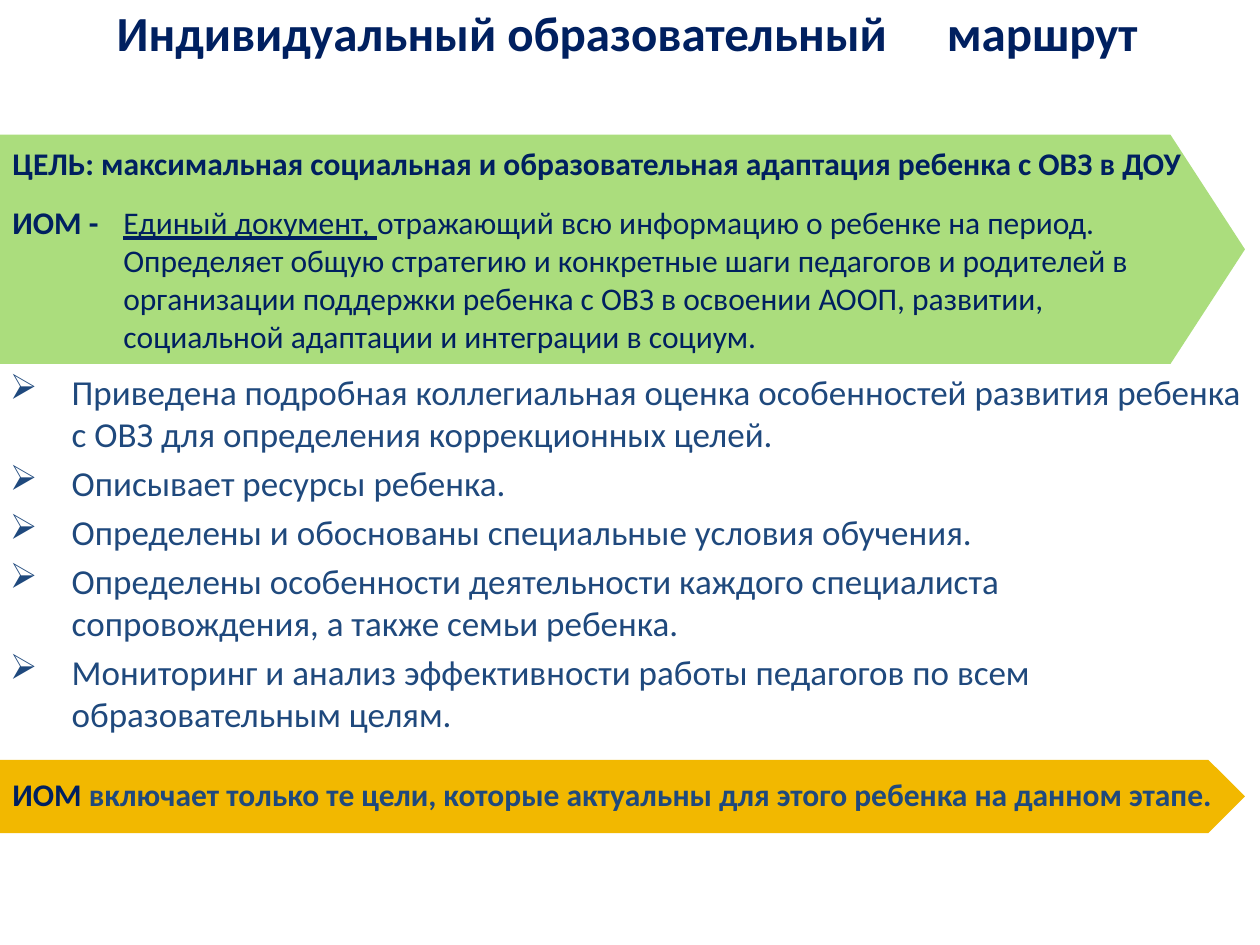
from lxml import etree
from pptx import Presentation
from pptx.dml.color import RGBColor
from pptx.enum import shapes, text
from pptx.oxml.ns import qn
from pptx.util import Pt

NAVY, BLUE, GREEN, AMBER = "002060", "1F497D", "ABDD7D", "F2B800"
LEFT = text.PP_ALIGN.LEFT
HANG = 63.4
FEATURES = [
    "Приведена подробная коллегиальная оценка особенностей развития ребенка с ОВЗ для определения коррекционных целей.",
    "Описывает ресурсы ребенка.",
    "Определены и обоснованы специальные условия обучения.",
    "Определены особенности деятельности каждого специалиста сопровождения, а также семьи ребенка.",
    "Мониторинг и анализ эффективности работы педагогов по всем образовательным целям.",
]


def color(value):
    """Turn a hex string into a colour."""
    return RGBColor.from_string(value)


def style(r, size, hue, bold=False, underline=False):
    """Format one run."""
    r.font.name, r.font.size = "Calibri", Pt(size)
    r.font.bold, r.font.underline = bold, underline
    r.font.color.rgb = color(hue)


def add_runs(p, size, *parts):
    """Fill a paragraph with runs given as wording followed by their style."""
    for wording, *look in parts:
        r = p.add_run()
        r.text = wording
        style(r, size, *look)


def indent(p, margin, first):
    """Set the left margin and first-line indent of a paragraph."""
    pPr = p._p.get_or_add_pPr()
    pPr.set("marL", str(Pt(margin)))
    pPr.set("indent", str(Pt(first)))
    return pPr


def add_title(s, wording):
    """Place and format the title."""
    sp = s.shapes.title
    sp.left, sp.top, sp.width, sp.height = Pt(0), Pt(0), Pt(723), Pt(45.4)
    tf = sp.text_frame
    tf.text = wording
    tf.auto_size = text.MSO_AUTO_SIZE.NONE
    tf.vertical_anchor = text.MSO_ANCHOR.MIDDLE
    p = tf.paragraphs[0]
    p.alignment, p.line_spacing = text.PP_ALIGN.CENTER, Pt(25)
    style(p.runs[0], 28, NAVY, True)


def add_banner(s, top, height, fill, point):
    """Add a full-width arrow banner and return its text frame."""
    sp = s.shapes.add_shape(shapes.MSO_SHAPE.PENTAGON, Pt(0), Pt(top), Pt(711.4), Pt(height))
    sp.adjustments[0] = point
    sp.shadow.inherit = False
    sp.fill.solid()
    sp.fill.fore_color.rgb = color(fill)
    sp.line.fill.background()
    tf = sp.text_frame
    tf.word_wrap = True
    tf.vertical_anchor = text.MSO_ANCHOR.MIDDLE
    return tf


def add_bullets(s, items):
    """Add the arrow-bulleted list."""
    tf = s.shapes.add_textbox(Pt(-1.4), Pt(208), Pt(723), Pt(287)).text_frame
    tf.word_wrap = True
    tf.text = "\n".join(items)
    for p in tf.paragraphs:
        p.space_before = Pt(4)
        pPr = indent(p, 35.3, -35.3)
        etree.SubElement(pPr, qn("a:buChar")).set("char", "➢")
        style(p.runs[0], 20, BLUE)


def add_goal(s):
    """Add the banner with the goal and the definition."""
    tf = add_banner(s, 77, 131, GREEN, 0.325)
    goal, term, detail = tf.paragraphs[0], tf.add_paragraph(), tf.add_paragraph()
    for p, first in ((goal, -HANG), (term, -HANG), (detail, 0)):
        p.alignment = LEFT
        indent(p, HANG, first)
    goal.space_after = Pt(12)
    add_runs(goal, 18, ("ЦЕЛЬ: максимальная социальная и образовательная адаптация ребенка с ОВЗ в ДОУ", NAVY, True))
    add_runs(term, 18, ("ИОМ -\t", NAVY, True), ("Единый документ, ", NAVY, False, True),
             ("отражающий всю информацию о ребенке на период.", NAVY))
    add_runs(detail, 18, ("Определяет общую стратегию и конкретные шаги педагогов и родителей в организации "
                          "поддержки ребенка с ОВЗ в освоении АООП, развитии, социальной адаптации и "
                          "интеграции в социум.", NAVY))


def add_summary(s):
    """Add the closing banner."""
    p = add_banner(s, 434.2, 41.8, AMBER, 0.5).paragraphs[0]
    p.alignment, p.line_spacing = LEFT, Pt(19)
    add_runs(p, 18, ("ИОМ ", NAVY, True),
             ("включает только те цели, которые актуальны для этого ребенка на данном этапе.", BLUE, True))


def main():
    """Build the slide and save it."""
    prs = Presentation()
    prs.slide_width, prs.slide_height = Pt(720), Pt(540)
    s = prs.slides.add_slide(prs.slide_layouts[5])
    add_title(s, "Индивидуальный образовательный\t маршрут ")
    add_bullets(s, FEATURES)
    add_goal(s)
    add_summary(s)
    prs.save("out.pptx")


if __name__ == "__main__":
    main()
